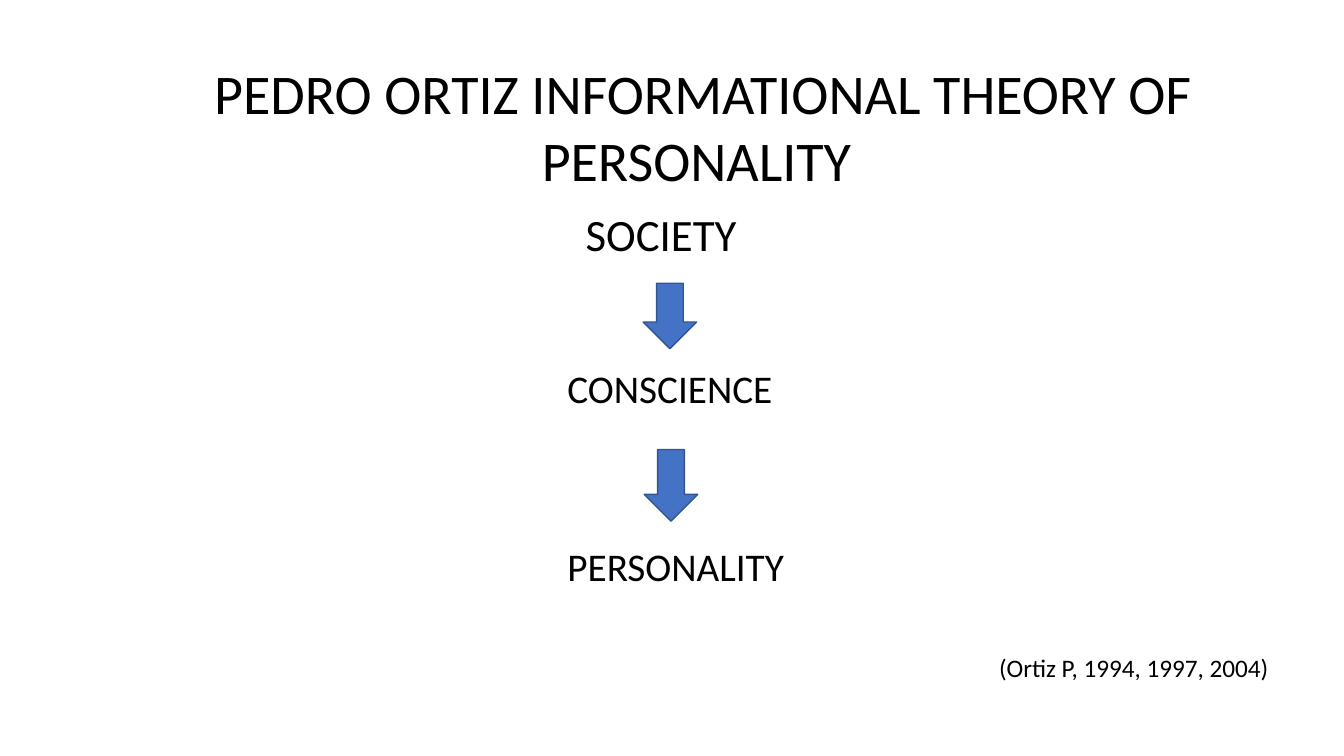
from typing import NamedTuple

from pptx import Presentation
from pptx import util as u
from pptx.dml.color import RGBColor
from pptx.enum import shapes, text
from pptx.slide import Slide

PX = 9144  # EMU per px, at 100 px to the inch
BLACK = RGBColor(0x00, 0x00, 0x00)
BLUE = RGBColor(0x44, 0x72, 0xC4)
DARK_BLUE = RGBColor(0x32, 0x54, 0x91)
FONT = "Calibri"


class Area(NamedTuple):
    left: int
    top: int
    width: int
    height: int

    def emu(self) -> list[int]:
        return [length * PX for length in self]


class Label(NamedTuple):
    area: Area
    lines: list[str]
    size: int
    align: text.PP_ALIGN = text.PP_ALIGN.LEFT
    wrap: bool = False


LABELS = [
    Label(Area(197, 53, 1000, 145),
          ["PEDRO ORTIZ INFORMATIONAL THEORY OF", "PERSONALITY "],
          40, align=text.PP_ALIGN.CENTER),
    Label(Area(571, 200, 207, 64), ["SOCIETY"], 32, wrap=True),
    Label(Area(553, 357, 225, 57), ["CONSCIENCE"], 28),
    Label(Area(553, 533, 237, 57), ["PERSONALITY"], 28),
    Label(Area(981, 642, 291, 40), ["(Ortiz P, 1994, 1997, 2004)"], 18),
]
ARROWS = [Area(638, 281, 53, 65), Area(639, 446, 53, 71)]


def add_text(page: Slide, area: Area, lines: list[str], *, size: int,
             align: text.PP_ALIGN, wrap: bool) -> None:
    frame = page.shapes.add_textbox(*area.emu()).text_frame
    frame.word_wrap = wrap
    frame.auto_size = text.MSO_AUTO_SIZE.SHAPE_TO_FIT_TEXT
    for index, line in enumerate(lines):
        para = frame.add_paragraph() if index else frame.paragraphs[0]
        para.alignment = align
        span = para.add_run()
        span.text = line
        span.font.name = FONT
        span.font.size = u.Pt(size)
        span.font.color.rgb = BLACK


def add_down_arrow(page: Slide, area: Area) -> None:
    arrow = page.shapes.add_shape(shapes.MSO_SHAPE.DOWN_ARROW, *area.emu())
    arrow.shadow.inherit = False
    arrow.fill.solid()
    arrow.fill.fore_color.rgb = BLUE
    arrow.line.color.rgb = DARK_BLUE
    arrow.line.width = u.Pt(1)


def main() -> None:
    deck = Presentation()
    deck.slide_width, deck.slide_height = 1333 * PX, 750 * PX
    page = deck.slides.add_slide(deck.slide_layouts[6])
    for area in ARROWS:
        add_down_arrow(page, area)
    for label in LABELS:
        add_text(page, label.area, label.lines, size=label.size,
                 align=label.align, wrap=label.wrap)
    deck.save("out.pptx")


if __name__ == "__main__":
    main()
